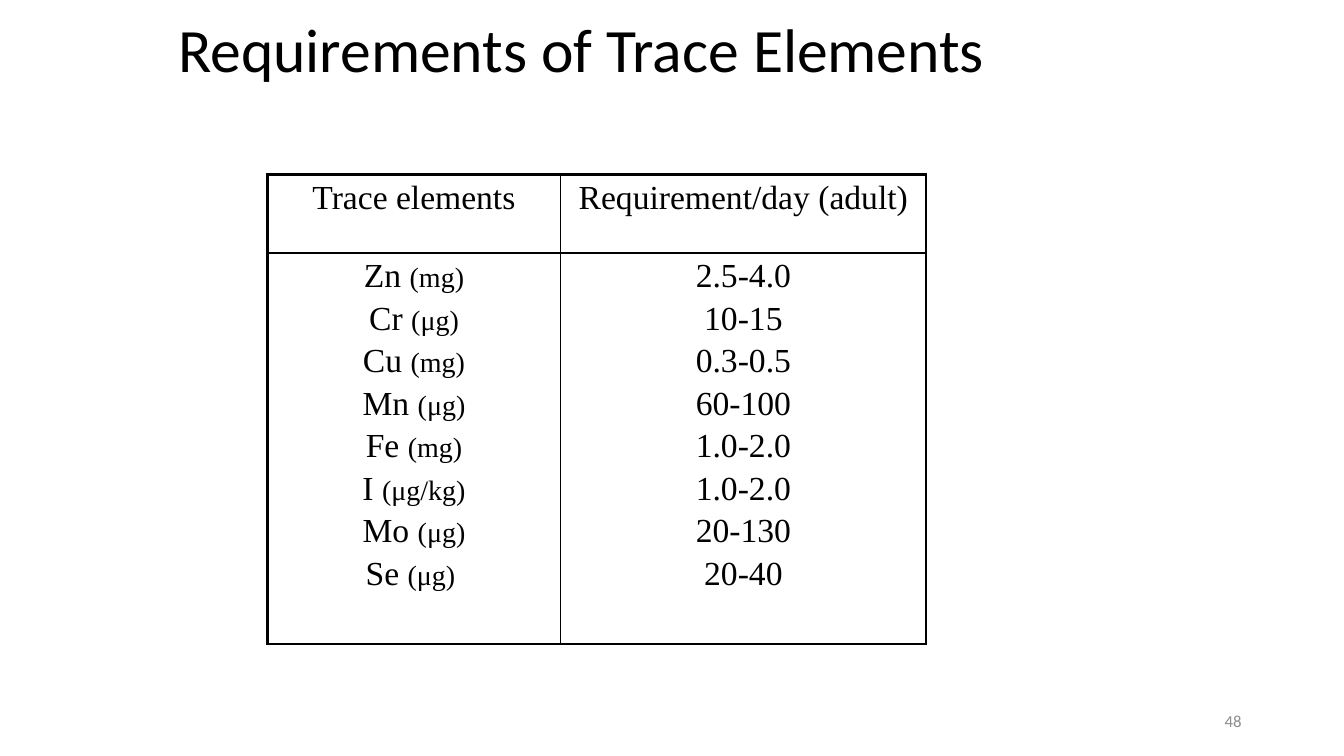
from dataclasses import dataclass

from lxml import etree
from pptx import Presentation
from pptx.dml.color import RGBColor
from pptx.enum.text import MSO_ANCHOR, MSO_AUTO_SIZE, PP_ALIGN
from pptx.oxml.ns import qn
from pptx.util import Pt

CENTER, LEFT, RIGHT = PP_ALIGN.CENTER, PP_ALIGN.LEFT, PP_ALIGN.RIGHT
MIDDLE = MSO_ANCHOR.MIDDLE
NO_FIT = MSO_AUTO_SIZE.NONE
BLACK = RGBColor(0x00, 0x00, 0x00)
GRAY = RGBColor(0x8C, 0x8C, 0x8C)
HEADING_FONT, TABLE_FONT = "Calibri", "Times New Roman"
THICK, THIN = Pt(2.25), Pt(1)
COLUMN_WIDTHS = (Pt(209.5), Pt(261))
ROW_HEIGHTS = (Pt(56.2), Pt(279.4))
HEADERS = ("Trace elements", "Requirement/day (adult)")


@dataclass
class TraceElement:
    symbol: str
    unit: str
    requirement: str


ELEMENTS = [
    TraceElement("Zn", "(mg)", "2.5-4.0"),
    TraceElement("Cr", "(μg)", "10-15"),
    TraceElement("Cu", "(mg)", "0.3-0.5"),
    TraceElement("Mn", "(μg)", "60-100"),
    TraceElement("Fe", "(mg)", "1.0-2.0"),
    TraceElement("I", "(μg/kg)", "1.0-2.0"),
    TraceElement("Mo", "(μg)", "20-130"),
    TraceElement("Se", "(μg) ", "20-40"),
]


def style(p, font: str, size: float, color: RGBColor, align) -> None:
    p.alignment = align
    p.font.name, p.font.size = font, Pt(size)
    p.font.color.rgb = color


def set_borders(cell, row: int, col: int) -> None:
    tcPr = cell._tc.get_or_add_tcPr()
    outer = {"L": col == 0, "R": col == 1, "T": row == 0, "B": row == 1}
    for side, is_outer in outer.items():
        ln = etree.SubElement(tcPr, qn(f"a:ln{side}"), w=str(THICK if is_outer else THIN))
        fill = etree.SubElement(ln, qn("a:solidFill"))
        etree.SubElement(fill, qn("a:srgbClr"), val=str(BLACK))


def fill_cell(cell, lines: list[tuple[str, str]]) -> None:
    tf = cell.text_frame
    for i, (text, unit) in enumerate(lines):
        p = tf.add_paragraph() if i else tf.paragraphs[0]
        style(p, TABLE_FONT, 24, BLACK, CENTER)
        p.space_before = Pt(3.8 if i else 0)
        p.add_run().text = f"{text} " if unit else text
        if unit:
            r = p.add_run()
            r.text = unit
            r.font.size = Pt(20)


def add_title(s) -> None:
    title = s.shapes.title
    title.left, title.top, title.width, title.height = Pt(120), Pt(3.6), Pt(638), Pt(67.7)
    tf = title.text_frame
    tf.text = "Requirements of Trace Elements"
    tf.vertical_anchor, tf.auto_size = MIDDLE, NO_FIT
    p = tf.paragraphs[0]
    style(p, HEADING_FONT, 44, BLACK, LEFT)
    p.line_spacing = 0.9


def add_requirements(s) -> None:
    table = s.shapes.add_table(2, 2, Pt(191), Pt(124.5), sum(COLUMN_WIDTHS), sum(ROW_HEIGHTS)).table
    table.first_row = table.horz_banding = False
    for column, width in zip(table.columns, COLUMN_WIDTHS):
        column.width = width
    for row, height in zip(table.rows, ROW_HEIGHTS):
        row.height = height
    body = (
        [(e.symbol, e.unit) for e in ELEMENTS],
        [(e.requirement, "") for e in ELEMENTS],
    )
    for col, header in enumerate(HEADERS):
        for row, lines in enumerate(([(header, "")], body[col])):
            cell = table.cell(row, col)
            set_borders(cell, row, col)
            cell.fill.background()
            fill_cell(cell, lines)


def add_page_number(s) -> None:
    tf = s.shapes.add_textbox(Pt(678), Pt(500.5), Pt(216), Pt(28.8)).text_frame
    tf.word_wrap = True
    tf.vertical_anchor = MIDDLE
    tf.text = "48"
    style(tf.paragraphs[0], HEADING_FONT, 12, GRAY, RIGHT)


def main() -> None:
    prs = Presentation()
    prs.slide_width, prs.slide_height = Pt(960), Pt(540)
    s = prs.slides.add_slide(prs.slide_layouts[5])
    add_title(s)
    add_page_number(s)
    add_requirements(s)
    prs.save("out.pptx")


if __name__ == "__main__":
    main()
